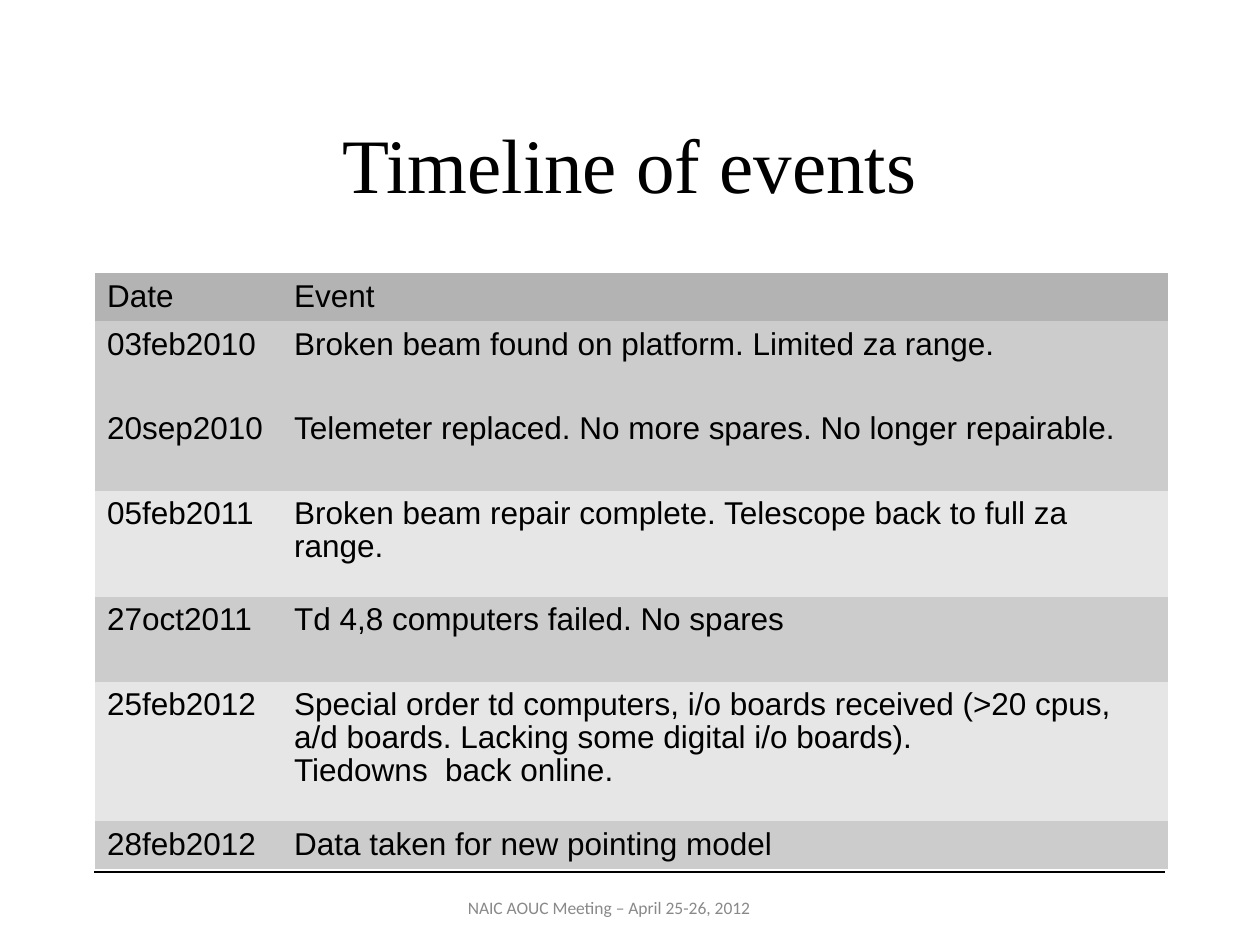
from lxml import etree
from pptx import Presentation
from pptx.dml.color import RGBColor
from pptx.enum import shapes, text
from pptx.oxml.ns import qn
from pptx.util import Cm, Pt

BLACK = RGBColor(0x00, 0x00, 0x00)
FOOTER_GREY = RGBColor(0x89, 0x89, 0x89)
HEADER_FILL = RGBColor(0xB3, 0xB3, 0xB3)
DARK_FILL = RGBColor(0xCC, 0xCC, 0xCC)
LIGHT_FILL = RGBColor(0xE6, 0xE6, 0xE6)

COLUMN_WIDTHS = (3.77, 17.86)
# date, event, fill, row height in cm
EVENTS = [
    ("Date", "Event", HEADER_FILL, 0.96),
    ("03feb2010", "Broken beam found on platform. Limited za range.", DARK_FILL, 1.71),
    ("20sep2010", "Telemeter replaced. No more spares. No longer repairable.", DARK_FILL, 1.71),
    ("05feb2011", "Broken beam repair complete. Telescope back to full za range.", LIGHT_FILL, 2.14),
    ("27oct2011", "Td 4,8 computers failed. No spares", DARK_FILL, 1.71),
    ("25feb2012", "Special order td computers, i/o boards received (>20 cpus, "
     "a/d boards. Lacking some digital i/o boards).\nTiedowns  back online.", LIGHT_FILL, 2.81),
    ("28feb2012", "Data taken for new pointing model", DARK_FILL, 0.96),
]


def style_font(font, name, size, color):
    font.name = name
    font.size = Pt(size)
    font.color.rgb = color


def add_centred_text(s, box, words, name, size, color):
    tf = s.shapes.add_textbox(*map(Cm, box)).text_frame
    tf.word_wrap = True
    tf.vertical_anchor = text.MSO_ANCHOR.MIDDLE
    tf.text = words
    p = tf.paragraphs[0]
    p.alignment = text.PP_ALIGN.CENTER
    style_font(p.runs[0].font, name, size, color)


def add_footer(s, left, top, width):
    line = s.shapes.add_connector(
        shapes.MSO_CONNECTOR.STRAIGHT, Cm(left), Cm(top), Cm(left + width), Cm(top))
    line.line.color.rgb = BLACK
    line.line.width = Pt(0.75)
    etree.SubElement(line._element.spPr, qn("a:effectLst"))
    add_centred_text(s, (left + 6.35, top + 0.2, 8.05, 1.02),
                     "NAIC AOUC Meeting – April 25-26, 2012", "Calibri", 10, FOOTER_GREY)


def add_hairline_borders(cell):
    """Replace the style's borders; call before the cell gets its fill."""
    tcPr = cell._tc.get_or_add_tcPr()
    for side in ("lnL", "lnR", "lnT", "lnB"):
        ln = etree.SubElement(tcPr, qn("a:" + side), w=str(Pt(0.03)))
        fill = etree.SubElement(ln, qn("a:solidFill"))
        etree.SubElement(fill, qn("a:srgbClr"), val="FFFFFF")


def fill_cell(cell, words, color):
    add_hairline_borders(cell)
    cell.fill.solid()
    cell.fill.fore_color.rgb = color
    cell.margin_top = Cm(0.16)
    cell.margin_bottom = Cm(0.08)
    cell.margin_left = cell.margin_right = Cm(0.25)
    cell.text_frame.text = words
    for p in cell.text_frame.paragraphs:
        p.line_spacing = 0.93
        for r in p.runs:
            style_font(r.font, "Arial", 18, BLACK)


def add_events_table(s, left, top):
    width, height = sum(COLUMN_WIDTHS), sum(row[-1] for row in EVENTS)
    table = s.shapes.add_table(len(EVENTS), len(COLUMN_WIDTHS), Cm(left), Cm(top),
                               Cm(width), Cm(height)).table
    table.first_row = table.horz_banding = False
    for column, column_width in zip(table.columns, COLUMN_WIDTHS):
        column.width = Cm(column_width)
    for row, (date, event, color, row_height) in zip(table.rows, EVENTS):
        row.height = Cm(row_height)
        for cell, words in zip(row.cells, (date, event)):
            fill_cell(cell, words, color)


def main():
    prs = Presentation()
    prs.slide_width, prs.slide_height = Cm(25.4), Cm(19.05)
    s = prs.slides.add_slide(prs.slide_layouts[6])
    add_footer(s, 1.9, 17.58, 21.59)
    add_centred_text(s, (1.9, 1.7, 21.59, 3.18), "Timeline of events",
                     "Times New Roman", 44, BLACK)
    add_events_table(s, 1.91, 5.51)
    prs.save("out.pptx")


if __name__ == "__main__":
    main()
